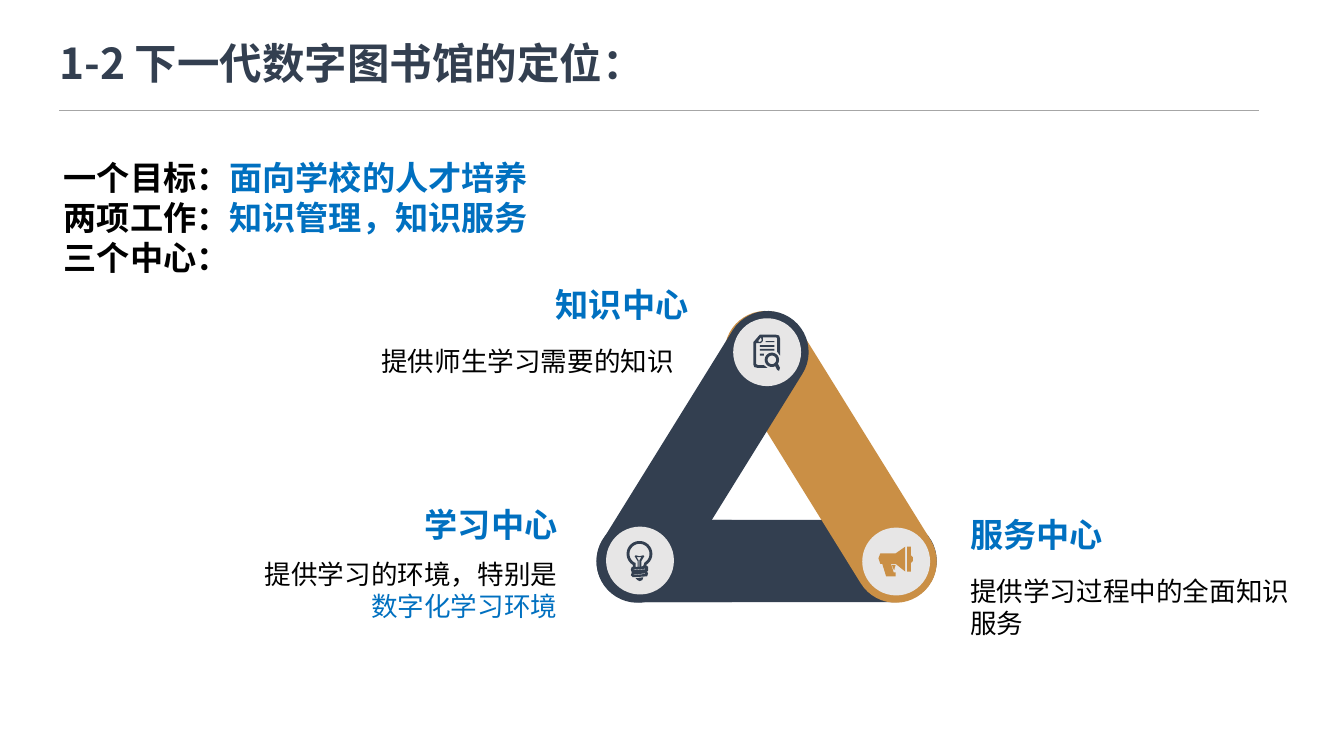
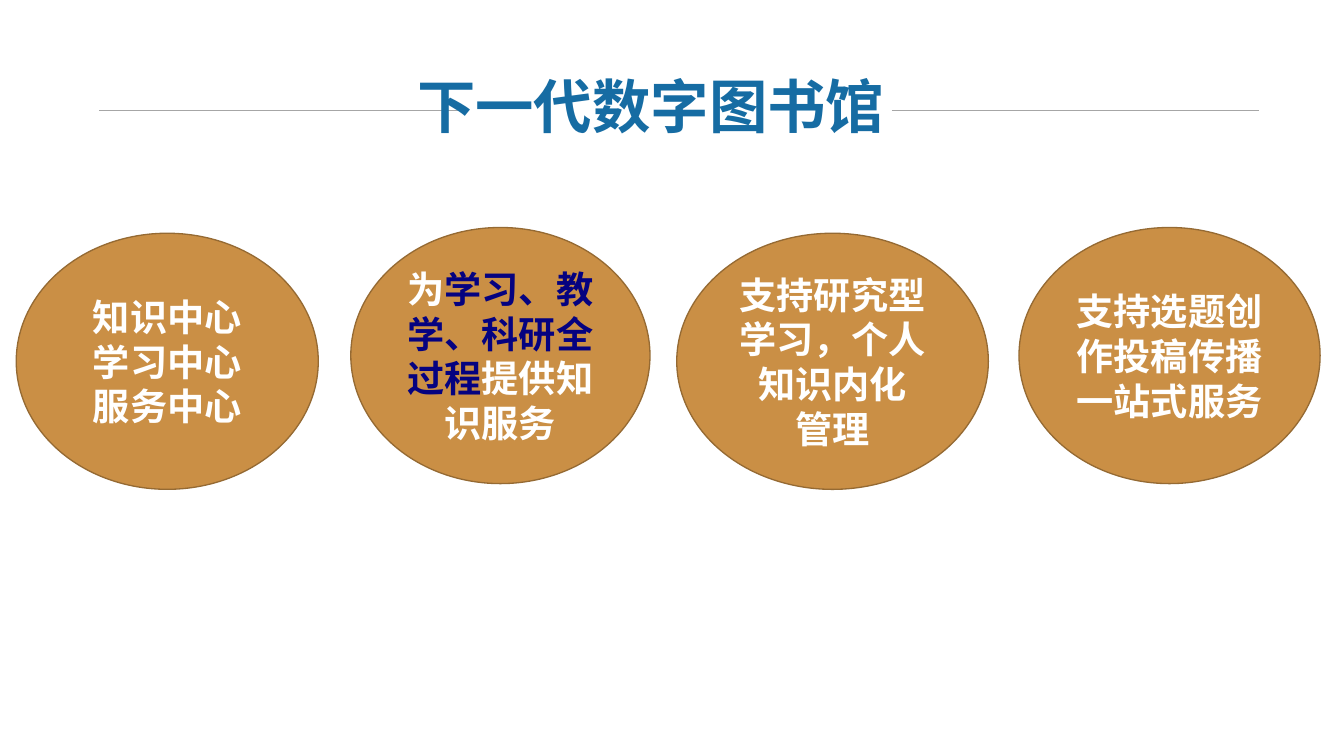
"""Build two slides on the positioning of the next-generation digital library."""
import math

from lxml import etree
from pptx import Presentation
from pptx import util as u
from pptx.dml.color import RGBColor
from pptx.enum import shapes, text
from pptx.oxml.ns import qn

FONT = "Noto Sans CJK SC"
NAVY = RGBColor(0x33, 0x3F, 0x50)
OCHRE = RGBColor(0xCA, 0x8F, 0x45)
BROWN = RGBColor(0x95, 0x6A, 0x33)
BLUE = RGBColor(0x00, 0x70, 0xC0)
TEAL = RGBColor(0x16, 0x6C, 0xA3)
INDIGO = RGBColor(0x05, 0x02, 0x80)
PALE = RGBColor(0xE7, 0xE6, 0xE6)
GREY = RGBColor(0xA6, 0xA6, 0xA6)
BLACK = RGBColor(0, 0, 0)
WHITE = RGBColor(0xFF, 0xFF, 0xFF)

LEFT, CENTER, RIGHT = text.PP_ALIGN.LEFT, text.PP_ALIGN.CENTER, text.PP_ALIGN.RIGHT
OVAL = shapes.MSO_SHAPE.OVAL
RULE_TOP = 1.15
UNITS_PER_INCH = 10000


def arc(x, y, radius, start=0, end=360, step=12):
    """Return the points of a circular arc, in hundredths of an inch."""
    angles = [math.radians(angle) for angle in range(start, end + 1, step)]
    return [(x + radius * math.cos(a), y + radius * math.sin(a)) for a in angles]


def bar(left, top, right, bottom):
    """Return the corners of a rectangle."""
    return [(left, top), (right, top), (right, bottom), (left, bottom)]


DOCUMENT_ICON = [
    [(7, 0), (23, 0), (27, 1), (28, 4), (28, 22), (25, 18), (25, 4), (24, 3),
     (10, 3), (10, 7), (8, 9), (3, 9), (3, 31), (5, 32), (11, 32), (15, 35),
     (5, 35), (1, 34), (0, 31), (0, 8), (1, 7)],
    [(8, 3), (5, 7), (7, 8), (9, 6)],
    bar(13, 7, 22, 8), bar(7, 11, 22, 13), bar(7, 15, 22, 17), bar(7, 20, 11, 22),
    arc(19.5, 26.5, 7.5), arc(19.5, 26.5, 4.5),
    [(23, 33), (25, 37), (27, 38), (28, 35), (26, 31)],
]
BULB_ICON = [
    arc(13, 13.5, 13.5, 120, 420)
    + [(22, 27), (22, 31), (21, 32), (22, 34), (21, 37), (6, 38), (4, 36),
       (5, 33), (4, 30), (5, 27), (6, 27)],
    arc(13, 13.5, 10.5, 120, 420)
    + [(17, 26), (15, 27), (15, 21), (18, 16), (17, 15), (13, 16), (9, 15),
       (8, 16), (11, 21), (11, 27), (9, 27), (9, 23)],
    [(15, 17), (10, 17), (12, 20), (12, 27), (13, 27), (13, 20)],
    [(7, 30), (19, 29), (19, 29.6), (7, 30.6)],
    [(7, 35), (19, 34), (19, 34.6), (7, 35.6)],
    [(17, 38), (9, 39), (11, 41), (13, 42), (16, 41)],
]
MEGAPHONE_ICON = [
    [(2, 7), (18, 7), (28, 0), (28, 26), (18, 18), (13, 18), (16, 27), (18, 27),
     (18, 31), (8, 31), (4, 18), (2, 18), (0, 12)],
    [(34, 9), (36, 11), (36, 15), (34, 17), (34, 26), (30, 26), (30, 0), (34, 0)],
    [(18, 19), (14, 19), (16, 24), (17, 24), (17, 22)],
]


class Board:
    """Hold the shared style and the current slide."""

    def __init__(self, deck):
        """Keep the deck."""
        self.deck = deck
        self.page = None

    def new_page(self):
        """Start a blank slide."""
        self.page = self.deck.slides.add_slide(self.deck.slide_layouts[6])

    def rule(self, left, right):
        """Draw a thin horizontal rule at the title's height."""
        ends = [u.Inches(v) for v in (left, RULE_TOP, right, RULE_TOP)]
        line = self.page.shapes.add_connector(shapes.MSO_CONNECTOR.STRAIGHT, *ends)
        line.line.color.rgb = GREY
        line.line.width = u.Pt(0.5)
        etree.SubElement(line._element.spPr, qn("a:effectLst"))

    def paint(self, shape, fill, outline=None):
        """Give a shape a flat fill and an optional outline."""
        shape.shadow.inherit = False
        shape.fill.solid()
        shape.fill.fore_color.rgb = fill
        if outline is None:
            shape.line.fill.background()
        else:
            shape.line.color.rgb = outline
            shape.line.width = u.Pt(1)

    def shape(self, kind, at, fill, outline=None, turn=0):
        """Add a preset shape."""
        shape = self.page.shapes.add_shape(kind, *map(u.Inches, at))
        self.paint(shape, fill, outline)
        shape.rotation = turn
        return shape

    def pill(self, at, fill, turn=0):
        """Add a bar with fully rounded ends."""
        self.shape(shapes.MSO_SHAPE.ROUNDED_RECTANGLE, at, fill, turn=turn).adjustments[0] = 0.5

    def icon(self, left, top, contours, fill):
        """Add an outline made of several closed contours."""
        contours = [[(x * 100, y * 100) for x, y in contour] for contour in contours]
        builder = self.page.shapes.build_freeform(
            *contours[0][0], scale=u.Inches(1) / UNITS_PER_INCH)
        for number, contour in enumerate(contours):
            if number:
                builder.move_to(*contour[0])
            builder.add_line_segments(contour[1:], close=True)
        self.paint(builder.convert_to_shape(u.Inches(left), u.Inches(top)), fill)

    def fill_text(self, frame, lines, size, align, bold):
        """Fill a frame with paragraphs of (words, colour) runs."""
        for number, line in enumerate(lines):
            para = frame.add_paragraph() if number else frame.paragraphs[0]
            para.alignment = align
            for words, color in line:
                span = para.add_run()
                span.text = words
                span.font.size = u.Pt(size)
                span.font.bold = bold
                span.font.name = FONT
                span.font.color.rgb = color
                east = etree.SubElement(span.font._element, qn("a:ea"))
                east.set("typeface", FONT)

    def text(self, at, lines, size, align=LEFT, bold=False, wrap=True):
        """Add a text box and return its frame."""
        box = self.page.shapes.add_textbox(*map(u.Inches, at))
        frame = box.text_frame
        frame.word_wrap = wrap
        frame.auto_size = text.MSO_AUTO_SIZE.SHAPE_TO_FIT_TEXT
        self.fill_text(frame, lines, size, align, bold)
        return frame

    def title(self, at, words, size, color, align=LEFT):
        """Add a bold title without margins."""
        frame = self.text(at, [[(words, color)]], size, align, bold=True)
        frame.vertical_anchor = text.MSO_ANCHOR.MIDDLE
        frame.margin_left = frame.margin_right = frame.margin_top = frame.margin_bottom = 0

    def oval(self, at, lines):
        """Add a captioned ellipse."""
        frame = self.shape(OVAL, at, OCHRE, BROWN).text_frame
        frame.word_wrap = True
        frame.vertical_anchor = text.MSO_ANCHOR.MIDDLE
        self.fill_text(frame, lines, 28, CENTER, bold=True)


def build_positioning(board):
    """Build the slide with the goal, the tasks and the triangle of centres."""
    board.new_page()
    board.rule(0.62, 13.17)

    board.pill((6.26, 5.44, 3.54, 0.86), NAVY)
    board.pill((6.97, 4.35, 3.44, 0.86), OCHRE, 58.2)
    board.pill((5.63, 4.35, 3.44, 0.86), NAVY, 301.8)
    board.pill((6.24, 5.44, 1.83, 0.86), NAVY)
    for left, top in ((7.67, 3.33), (6.34, 5.51), (9.02, 5.52)):
        board.shape(OVAL, (left, top, 0.71, 0.71), PALE)
    board.icon(7.88, 3.5, DOCUMENT_ICON, NAVY)
    board.icon(6.56, 5.66, BULB_ICON, NAVY)
    board.icon(9.19, 5.72, MEGAPHONE_ICON, OCHRE)

    centres = [
        ("服务中心", (10.05, 5.33), LEFT, (10.05, 5.97, 3.56, 0.77), LEFT,
         [("提供学习过程中的全面知识服务", BLACK)]),
        ("知识中心", (5.7, 2.93), RIGHT, (3.74, 3.56, 3.56, 0.44), CENTER,
         [("提供师生学习需要的知识", BLACK)]),
        ("学习中心", (4.33, 5.23), RIGHT, (2.43, 5.79, 3.5, 0.77), RIGHT,
         [("提供学习的环境，特别是", BLACK), ("数字化学习环境", BLUE)]),
    ]
    for name, corner, name_align, at, align, line in centres:
        board.text((*corner, 1.6, 0.52), [[(name, BLUE)]], 25, name_align, bold=True, wrap=False)
        board.text(at, [line], 20, align)

    board.title((0.62, 0.38, 12.92, 0.54), "1-2 下一代数字图书馆的定位：", 32, NAVY)
    summary = [
        [("一个目标：", BLACK), ("面向学校的人才培养", BLUE)],
        [("两项工作：", BLACK), ("知识管理，知识服务", BLUE)],
        [("三个中心：", BLACK)],
    ]
    board.text((0.57, 1.6, 5.14, 1.36), summary, 25, bold=True, wrap=False)


def build_overview(board):
    """Build the slide with the four roles of the library."""
    board.new_page()
    board.rule(1.04, 4.88)
    board.rule(9.33, 13.17)
    board.title((3.67, 0.73, 6.28, 0.74), "下一代数字图书馆", 44, TEAL, CENTER)
    roles = [
        (0.17, 2.44, 3.16, [[(name, WHITE)] for name in ("知识中心", "学习中心", "服务中心")]),
        (3.67, 2.38, 3.13, [[("为", WHITE), ("学习、教学、科研全过程", INDIGO),
                             ("提供知识服务", WHITE)]]),
        (7.08, 2.44, 3.26, [[("支持研究型学习，个人知识内化", WHITE)], [("管理", WHITE)]]),
        (10.66, 2.38, 3.15, [[("支持选题创作投稿传播一站式服务", WHITE)]]),
    ]
    for left, top, width, lines in roles:
        board.oval((left, top, width, 2.68), lines)


def main():
    """Build and save the deck."""
    deck = Presentation()
    deck.slide_width = u.Inches(14.06)
    deck.slide_height = u.Inches(7.91)
    board = Board(deck)
    build_positioning(board)
    build_overview(board)
    deck.save("out.pptx")


if __name__ == "__main__":
    main()
